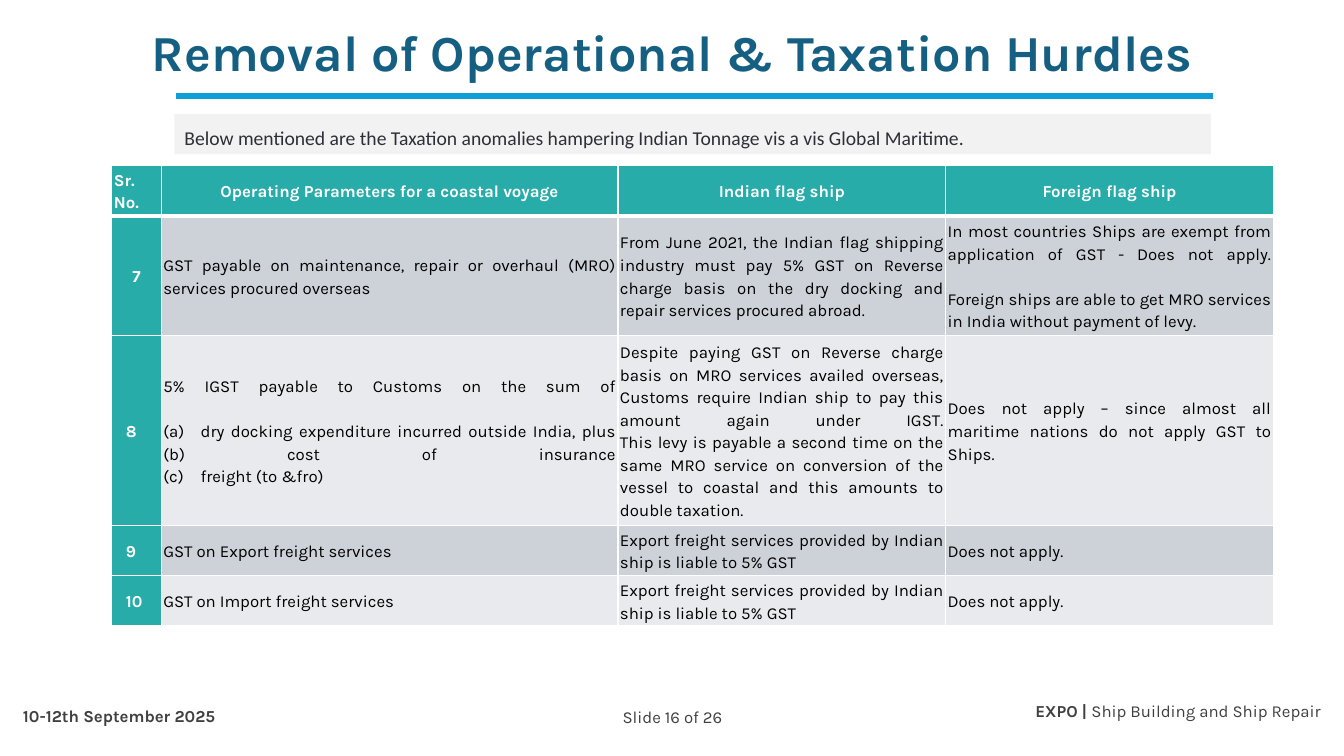
import copy
import pptx
import pptx.util
import pptx.dml.color
import pptx.enum.text
import pptx.enum.shapes
import pptx.oxml
import pptx.oxml.ns
from lxml import etree

Inches, Pt = pptx.util.Inches, pptx.util.Pt
ALIGN = pptx.enum.text.PP_ALIGN
ANCHOR = pptx.enum.text.MSO_ANCHOR
qn = pptx.oxml.ns.qn

# Content
TITLE = "Removal of Operational & Taxation Hurdles"
NOTE = "Below mentioned are the Taxation anomalies hampering Indian Tonnage vis a vis Global Maritime."
HEAD = ["Sr. No.", "Operating Parameters for a coastal voyage", "Indian flag ship", "Foreign flag ship"]
LEVY = "Export freight services provided by Indian ship is liable to 5% GST"
ROWS = [
    ["7",
     "GST payable on maintenance, repair or overhaul (MRO) services procured overseas",
     "From June 2021, the Indian flag shipping industry must pay 5% GST on Reverse charge basis "
     "on the dry docking and repair services procured abroad.",
     "In most countries Ships are exempt from application of GST - Does not apply.\n\n"
     "Foreign ships are able to get MRO services in India without payment of levy."],
    ["8",
     "5% IGST payable to Customs on the sum of\n\n"
     "(a)\tdry docking expenditure incurred outside India, plus\n"
     "(b) cost of insurance\n(c)\tfreight (to &fro)",
     "Despite paying GST on Reverse charge basis on MRO services availed overseas, "
     "Customs require Indian ship to pay this amount again under IGST.\n"
     "This levy is payable a second time on the same MRO service on conversion of the vessel "
     "to coastal and this amounts to double taxation.",
     "Does not apply – since almost all maritime nations do not apply GST to Ships."],
    ["9", "GST on Export freight services", LEVY, "Does not apply."],
    ["10", "GST on Import freight services", LEVY, "Does not apply."],
]
WIDTHS = [0.49, 4.53, 3.25, 3.25]
HEIGHTS = [0.5, 1.19, 1.88, 0.5, 0.5]
FOOT = [  # left, top, width, height, alignment, (text, bold) runs
    (5.17, 6.96, 3, 0.4, ALIGN.CENTER, [("Slide 16 of 26", False)]),
    (0.13, 6.95, 3, 0.4, ALIGN.LEFT, [("10-12th September 2025", True)]),
    (8.7, 6.9, 4.5, 0.5, ALIGN.RIGHT, [("EXPO | ", True), ("Ship Building and Ship Repair", False)]),
]
TEAL, BANDS, WHITE, GREY = "27ACAA", ["CCD2D8", "E8EAED"], "FFFFFF", "404040"


def tint(hue):
    return pptx.dml.color.RGBColor.from_string(hue)


def paint(part, hue):
    part.fill.solid()
    part.fill.fore_color.rgb = tint(hue)


def write(para, text, size=12, face="Karla", hue="000000", bold=False,
          align=ALIGN.LEFT, gap=None, indent=0, tab=0):
    """Add text to a paragraph; each newline becomes a line break."""
    props = para._p.get_or_add_pPr()
    if tab:
        stops = etree.SubElement(props, qn("a:tabLst"))
        etree.SubElement(stops, qn("a:tab"), pos=str(Inches(tab)), algn="l")
    if indent:
        props.set("marL", "0")
        props.set("indent", str(Inches(indent)))
    para.alignment = align
    if gap:
        para.line_spacing = gap
    for num, line in enumerate(text.split("\n")):
        if num:
            para.add_line_break()
        if line:
            run = para.add_run()
            run.text = line
            font = run.font
            font.size, font.name, font.bold = Pt(size), face, bold
            font.color.rgb = tint(hue)
    # Line breaks share the format of the text
    for mark in para._p.findall(qn("a:br")):
        if mark.find(qn("a:rPr")) is None:
            mark.append(copy.deepcopy(font._rPr))


def edge(cell, low):
    """Give a cell white borders, with its own bottom width."""
    props = cell._tc.get_or_add_tcPr()
    for num, (side, wide) in enumerate([("L", 1), ("R", 1), ("T", 1), ("B", low)]):
        line = etree.Element(qn("a:ln" + side), w=str(Pt(wide)))
        fill = etree.SubElement(line, qn("a:solidFill"))
        etree.SubElement(fill, qn("a:srgbClr"), val=WHITE)
        props.insert(num, line)


deck = pptx.Presentation()
deck.slide_width, deck.slide_height = Inches(13.33), Inches(7.5)
slide = deck.slides.add_slide(deck.slide_layouts[5])
shapes = slide.shapes

# Title and rule
title = shapes.title
title.left, title.top, title.width, title.height = map(Inches, (1.24, 0.14, 10.85, 0.81))
title.text_frame.auto_size = pptx.enum.text.MSO_AUTO_SIZE.NONE
title.text_frame.vertical_anchor = ANCHOR.MIDDLE
write(title.text_frame.paragraphs[0], TITLE, size=36, hue="156082", bold=True,
      align=ALIGN.CENTER, gap=0.9)
rule = shapes.add_connector(pptx.enum.shapes.MSO_CONNECTOR.STRAIGHT,
                            *map(Inches, (1.75, 0.95, 12.03, 0.95)))
rule.line.color.rgb = tint("0F9ED5")
rule.line.width = Pt(4.5)
etree.SubElement(rule._element.spPr, qn("a:effectLst"))

# Note bar
bar = shapes.add_shape(pptx.enum.shapes.MSO_SHAPE.RECTANGLE, *map(Inches, (1.73, 1.13, 10.28, 0.4)))
bar.shadow.inherit = False
paint(bar, "F2F2F2")
bar.line.fill.background()
bar.text_frame.word_wrap = True
bar.text_frame.vertical_anchor = ANCHOR.BOTTOM
write(bar.text_frame.paragraphs[0], NOTE, size=14, face="Calibri", hue="2E2E38")

# Tax table
frame = shapes.add_table(len(HEIGHTS), len(WIDTHS), Inches(1.11), Inches(1.64),
                         Inches(sum(WIDTHS)), Inches(sum(HEIGHTS)))
table = frame.table
for col, wide in zip(table.columns, WIDTHS):
    col.width = Inches(wide)
for row, high in zip(table.rows, HEIGHTS):
    row.height = Inches(high)
for r, texts in enumerate([HEAD] + ROWS):
    for c, text in enumerate(texts):
        cell = table.cell(r, c)
        cell.margin_left = cell.margin_right = Inches(0.02)
        cell.margin_top = cell.margin_bottom = Inches(0.02)
        cell.vertical_anchor = ANCHOR.MIDDLE
        label = r == 0 or c == 0
        paint(cell, TEAL if label else BANDS[(r - 1) % 2])
        edge(cell, 1 if r else 3)
        if not label:
            align = ALIGN.JUSTIFY
        elif (r == 0 and c) or r == 1:
            align = ALIGN.CENTER
        else:
            align = ALIGN.LEFT
        write(cell.text_frame.paragraphs[0], text, hue=WHITE if label else "000000",
              bold=label, align=align, gap=1.15, indent=0.12 if c == 0 and r > 1 else 0,
              tab=0.37 if "\t" in text else 0)

# Footer
for left, top, wide, high, align, runs in FOOT:
    box = shapes.add_textbox(*map(Inches, (left, top, wide, high)))
    box.text_frame.word_wrap = True
    for text, bold in runs:
        write(box.text_frame.paragraphs[0], text, hue=GREY, bold=bold, align=align)

deck.save("out.pptx")
